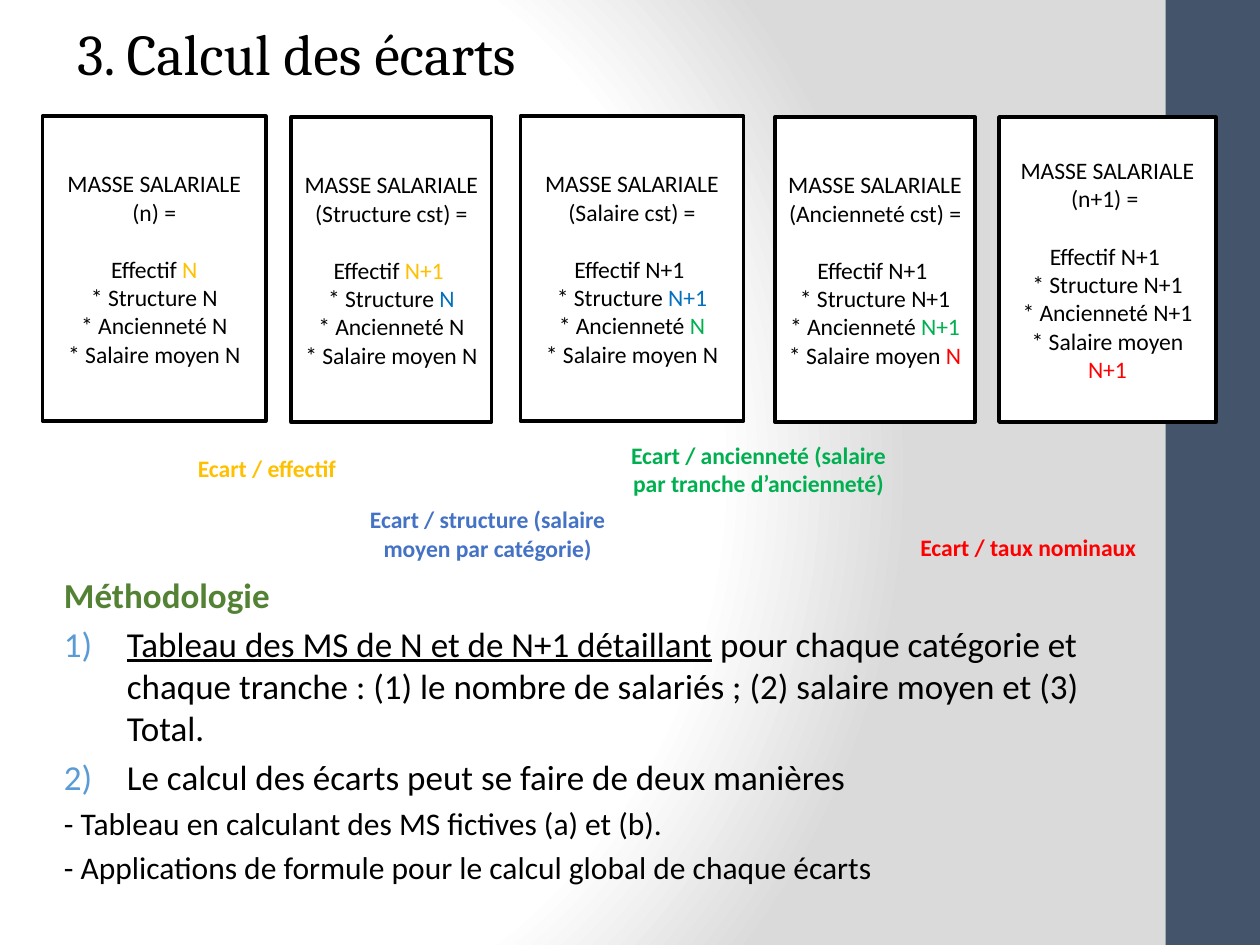
import pptx
import pptx.dml.color
import pptx.enum.shapes
import pptx.enum.text
import pptx.oxml
import pptx.oxml.ns
import pptx.util
from pptx.util import Cm

COLORS = {
    "black": "000000",
    "white": "FFFFFF",
    "shade": "DADADA",
    "panel": "44546A",
    "effectif": "FFC000",
    "structure": "0070C0",
    "anciennete": "00B050",
    "salaire": "FF0000",
    "structure_gap": "4472C4",
    "heading": "548235",
    "number": "5B9BD5",
}
FACTORS = [
    ("Effectif ", "effectif"),
    ("* Structure ", "structure"),
    ("* Ancienneté ", "anciennete"),
    ("* Salaire moyen ", "salaire"),
]
CARDS = [
    ("(n) =", 0.86, 2.34, 4.5),
    ("(Structure cst) =", 5.87, 2.36, 4.04),
    ("(Salaire cst) =", 10.49, 2.34, 4.5),
    ("(Ancienneté cst) =", 15.62, 2.36, 4.04),
    ("(n+1) = ", 20.14, 2.36, 4.37),
]
CARD_HEIGHT = 6.15
GAPS = [
    ("Ecart / effectif", 2.46, 9.02, 0.84, "effectif"),
    ("Ecart / ancienneté (salaire par tranche d’ancienneté)", 12.37, 8.76, 1.42, "anciennete"),
    ("Ecart / structure (salaire moyen par catégorie)", 6.91, 10.06, 1.42, "structure_gap"),
    ("Ecart / taux nominaux", 17.81, 10.62, 0.84, "salaire"),
]
GAP_WIDTH = 5.84
SMALL = 13.5


def rgb(name):
    return pptx.dml.color.RGBColor.from_string(COLORS[name])


def add_span(para, text, size, color="black", bold=False, underline=False, font="Calibri"):
    span = para.add_run()
    span.text = text
    span.font.name = font
    span.font.size = pptx.util.Pt(size)
    span.font.bold = bold
    span.font.underline = underline
    span.font.color.rgb = rgb(color)


def add_para(frame, first=False):
    return frame.paragraphs[0] if first else frame.add_paragraph()


def add_centred(frame, first=False):
    para = add_para(frame, first)
    para.alignment = pptx.enum.text.PP_ALIGN.CENTER
    return para


def paint_background(slide):
    slide.background.fill.gradient()
    properties = slide.element.find(".//" + pptx.oxml.ns.qn("p:bgPr"))
    stops = "".join(
        f'<a:gs pos="{position * 1000}"><a:srgbClr val="{COLORS[color]}"/></a:gs>'
        for position, color in [(0, "white"), (75, "white"), (100, "shade")]
    )
    gradient = pptx.oxml.parse_xml(
        f'<a:gradFill {pptx.oxml.ns.nsdecls("a")} rotWithShape="1"><a:gsLst>{stops}</a:gsLst>'
        '<a:path path="circle"><a:fillToRect l="20000" t="50000" r="100000" b="50000"/></a:path>'
        "</a:gradFill>"
    )
    properties.replace(properties[0], gradient)


def add_rectangle(slide, left, top, width, height, fill):
    box = slide.shapes.add_shape(
        pptx.enum.shapes.MSO_SHAPE.RECTANGLE, Cm(left), Cm(top), Cm(width), Cm(height)
    )
    box.shadow.inherit = False
    box.fill.solid()
    box.fill.fore_color.rgb = rgb(fill)
    box.line.fill.background()
    return box


def add_text_box(slide, left, top, width, height):
    box = slide.shapes.add_textbox(Cm(left), Cm(top), Cm(width), Cm(height))
    box.text_frame.word_wrap = True
    return box.text_frame


def set_title(slide, text):
    title = slide.shapes.title
    title.left, title.top, title.width, title.height = Cm(1.3), Cm(0.38), Cm(21.92), Cm(2.77)
    frame = title.text_frame
    frame.vertical_anchor = pptx.enum.text.MSO_ANCHOR.TOP
    para = frame.paragraphs[0]
    para.alignment = pptx.enum.text.PP_ALIGN.LEFT
    para.line_spacing = 0.9
    add_span(para, text, 33, font="Cambria")


def add_card(slide, step, name, left, top, width):
    box = add_rectangle(slide, left, top, width, CARD_HEIGHT, "white")
    box.line.color.rgb = rgb("black")
    box.line.width = pptx.util.Pt(2)
    frame = box.text_frame
    frame.word_wrap = True
    frame.vertical_anchor = pptx.enum.text.MSO_ANCHOR.MIDDLE
    add_span(add_centred(frame, first=True), f"MASSE SALARIALE {name}", SMALL)
    for index, (label, color) in enumerate(FACTORS):
        para = add_centred(frame)
        period = "N+1" if index < step else "N"
        if index == 0:
            para.space_before = pptx.util.Pt(16.5)
            if step:
                period += " "
        add_span(para, label, SMALL)
        add_span(para, period, SMALL, color if index in (step - 1, step) else "black")


def add_gap(slide, text, left, top, height, color):
    frame = add_text_box(slide, left, top, GAP_WIDTH, height)
    add_span(add_centred(frame, first=True), text, SMALL, color, bold=True)


def add_method_para(frame, size, first=False, numbered=False, level=0):
    para = add_para(frame, first)
    para.level = level
    properties = para._p.get_or_add_pPr()
    properties.set("marL", str(Cm(1.57 if numbered else 0.3)))
    properties.set("indent", str(Cm(-1.27 if numbered else 0)))
    if not first:
        para.space_before = pptx.util.Pt(size * 0.2)
    if numbered:
        namespace = pptx.oxml.ns.nsdecls("a")
        properties.append(pptx.oxml.parse_xml(
            f'<a:buClr {namespace}><a:srgbClr val="{COLORS["number"]}"/></a:buClr>'))
        properties.append(pptx.oxml.parse_xml(
            f'<a:buAutoNum {namespace} type="arabicParenR"/>'))
    return para


def add_method(slide):
    frame = add_text_box(slide, 0.74, 11.43, 22.48, 7.4)
    add_span(add_method_para(frame, 20, first=True), "Méthodologie", 20, "heading", bold=True)
    para = add_method_para(frame, 20, numbered=True)
    add_span(para, "Tableau des MS de N et de N+1 détaillant", 20, underline=True)
    add_span(para, " pour chaque catégorie et chaque tranche : (1) le nombre de salariés ; "
                   "(2) salaire moyen et (3) Total.", 20)
    para = add_method_para(frame, 20, numbered=True)
    add_span(para, "Le calcul des écarts peut se faire de deux manières", 20)
    for text in ("- Tableau en calculant des MS fictives (a) et (b).",
                 "- Applications de formule pour le calcul global de chaque écarts"):
        add_span(add_method_para(frame, 18, level=1), text, 18)


def main():
    deck = pptx.Presentation()
    deck.slide_width, deck.slide_height = Cm(25.4), Cm(19.05)
    slide = deck.slides.add_slide(deck.slide_layouts[5])
    paint_background(slide)
    add_rectangle(slide, 23.5, 0, 1.9, 19.05, "panel")
    set_title(slide, "3. Calcul des écarts")
    for step, card in enumerate(CARDS):
        add_card(slide, step, *card)
    for gap in GAPS:
        add_gap(slide, *gap)
    add_method(slide)
    deck.save("out.pptx")


if __name__ == "__main__":
    main()
